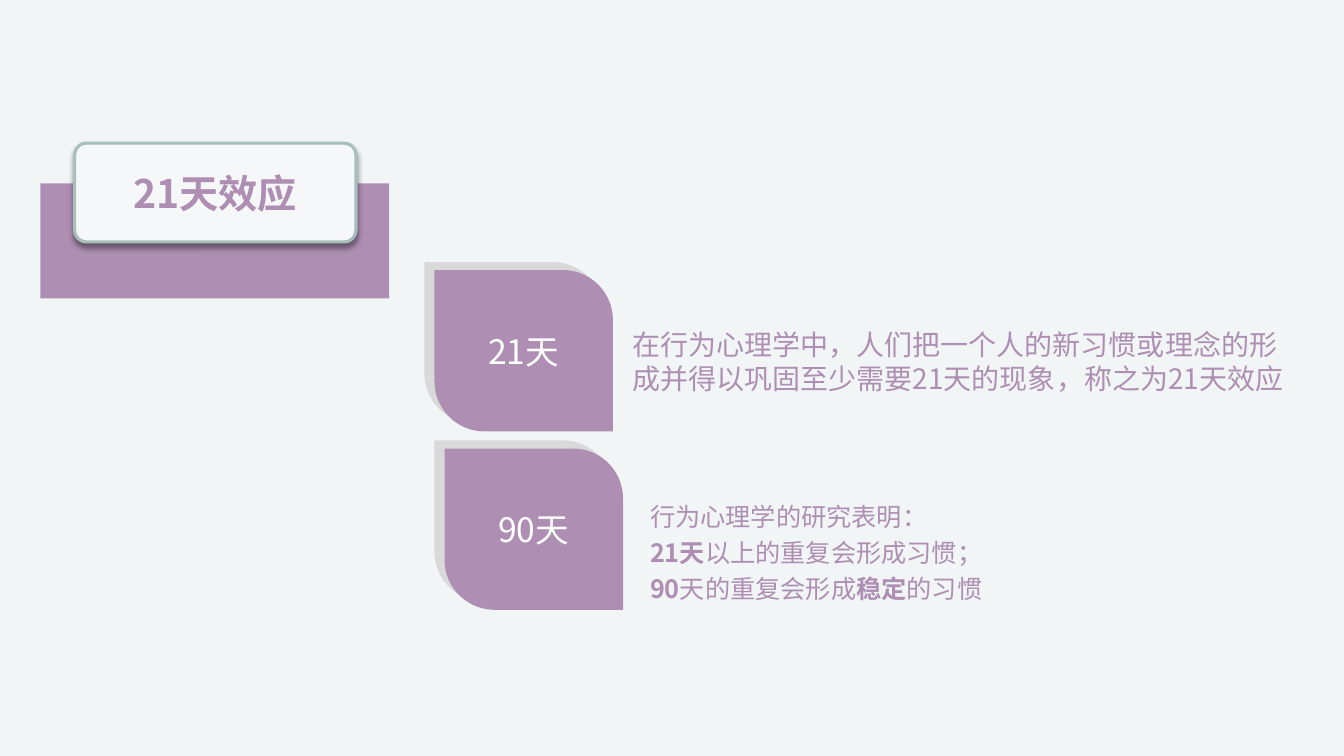
import pptx
import pptx.util
import pptx.dml.color
import pptx.enum.shapes
import pptx.enum.text
import pptx.oxml
import pptx.oxml.ns

SHAPE = pptx.enum.shapes.MSO_SHAPE
ALIGN = pptx.enum.text.PP_ALIGN
PURPLE, LEAF, GREY, WHITE = "AE8EB3", "AE8FB3", "D9D9D9", "FFFFFF"
PANEL, BORDER, BACKGROUND = "F6F7F9", "A7BFBA", "F1F5F6"


def rgb(value):
    return pptx.dml.color.RGBColor.from_string(value)


class Deck:
    """Style and current slide; lengths are grid columns and rows."""

    FONT = "Noto Sans CJK SC"
    CELL = pptx.util.Inches(0.1)

    def __init__(self, prs):
        self.slide = prs.slides.add_slide(prs.slide_layouts[6])
        self.slide.background.fill.solid()
        self.slide.background.fill.fore_color.rgb = rgb(BACKGROUND)

    def box(self, *cells):
        return [round(c * self.CELL) for c in cells]

    def shape(self, kind, cells, fill, parent=None):
        s = (parent or self.slide).shapes.add_shape(kind, *self.box(*cells))
        s.shadow.inherit = False
        s.fill.solid()
        s.fill.fore_color.rgb = rgb(fill)
        s.line.fill.background()
        return s

    def fill_text(self, s, paragraphs, size, color, align=ALIGN.LEFT, bold=None, spacing=None):
        """Each paragraph is a list of (text, bold) runs."""
        tf = s.text_frame
        tf.word_wrap = True
        for i, runs in enumerate(paragraphs):
            p = tf.paragraphs[0] if i == 0 else tf.add_paragraph()
            p.alignment, p.line_spacing = align, spacing
            font = p.font
            font.size, font.name, font.bold = pptx.util.Pt(size), self.FONT, bold
            font.color.rgb = rgb(color)
            # East Asian typeface follows the Latin one
            latin = p._p.pPr.find(".//" + pptx.oxml.ns.qn("a:latin"))
            latin.addnext(pptx.oxml.parse_xml(
                f'<a:ea {pptx.oxml.ns.nsdecls("a")} typeface="{self.FONT}"/>'))
            for text, strong in runs:
                r = p.add_run()
                r.text = text
                if strong:
                    r.font.bold = True

    def text(self, cells, paragraphs, size, spacing=None):
        s = self.slide.shapes.add_textbox(*self.box(*cells))
        self.fill_text(s, paragraphs, size, PURPLE, spacing=spacing)
        s.text_frame.auto_size = pptx.enum.text.MSO_AUTO_SIZE.SHAPE_TO_FIT_TEXT

    def title(self, cells, text):
        s = self.shape(SHAPE.ROUNDED_RECTANGLE, cells, PANEL)
        s.adjustments[0] = 0.12
        s.line.color.rgb = rgb(BORDER)
        s.line.width = pptx.util.Pt(2.25)
        effects = s._element.spPr.find(pptx.oxml.ns.qn("a:effectLst"))
        effects.append(pptx.oxml.parse_xml(
            f'<a:outerShdw {pptx.oxml.ns.nsdecls("a")} blurRad="{pptx.util.Pt(4)}" '
            f'dist="{pptx.util.Pt(3)}" dir="5400000" algn="t" rotWithShape="0">'
            '<a:srgbClr val="000000"><a:alpha val="40000"/></a:srgbClr></a:outerShdw>'))
        s.text_frame.vertical_anchor = pptx.enum.text.MSO_ANCHOR.MIDDLE
        self.fill_text(s, [[(text, False)]], 28, PURPLE, ALIGN.CENTER, bold=True)

    def leaf(self, col, row, text):
        """Purple leaf over a grey one set slightly up and left."""
        group = self.slide.shapes.add_group_shape()
        for shift, fill in ((0, GREY), (1, LEAF)):
            cells = (col + shift, row + 0.8 * shift, 17.7, 16)
            s = self.shape(SHAPE.ROUND_2_DIAG_RECTANGLE, cells, fill, group)
            s.adjustments[0], s.adjustments[1] = 0.31, 0
            s._element.spPr.xfrm.set("flipH", "1")
        tf = s.text_frame
        tf.margin_left = tf.margin_right = pptx.util.Inches(0.13)
        tf.margin_top = tf.margin_bottom = pptx.util.Inches(0.06)
        tf.vertical_anchor = pptx.enum.text.MSO_ANCHOR.MIDDLE
        self.fill_text(s, [[(text, False)]], 24, WHITE, ALIGN.CENTER)


def main():
    prs = pptx.Presentation()
    prs.slide_width = pptx.util.Inches(13.33)
    prs.slide_height = pptx.util.Inches(7.5)
    deck = Deck(prs)

    # Title
    deck.shape(SHAPE.RECTANGLE, (4, 18.2, 34.6, 11.4), PURPLE)
    deck.title((7.4, 14.2, 27.9, 9.8), "21天效应")

    # 21 days
    deck.leaf(42.1, 26, "21天")
    deck.text((61.7, 32, 67.8, 7.7), [
        [("在行为心理学中，人们把一个人的新习惯或理念的形成并得以巩固"
          "至少需要21天的现象，称之为21天效应", False)],
    ], 20)

    # 90 days
    deck.leaf(43.1, 43.7, "90天")
    deck.text((63.5, 48.6, 66.7, 11.9), [
        [("行为心理学的研究表明：", False)],
        [("21天", True), ("以上的重复会形成习惯；", False)],
        [("90", True), ("天的重复会形成", False), ("稳定", True), ("的习惯", False)],
    ], 18, spacing=1.2)

    prs.save("out.pptx")


if __name__ == "__main__":
    main()
